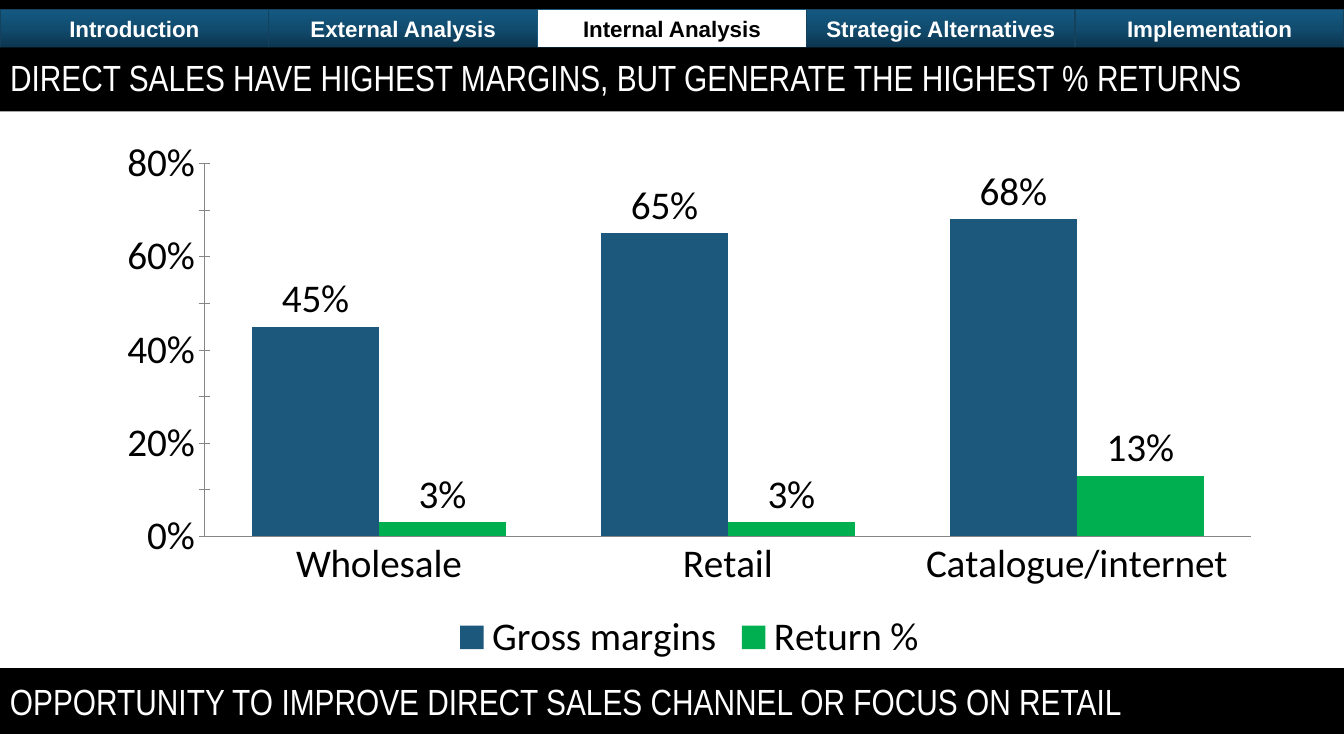
import copy
from dataclasses import dataclass

import pptx
import pptx.chart.data
import pptx.dml.color
import pptx.enum.chart
import pptx.enum.shapes
import pptx.enum.text
import pptx.util

PX = 9525
SLIDE_W, SLIDE_H = 1280, 720
STRIP_H, TAB_H, BAR_H = 9, 36, 61
BLACK, WHITE, NAVY, GREEN, GREY = "000000", "FFFFFF", "1B587C", "00B050", "868686"
TAB_GRADIENT = ((0, "0C354E"), (0.5, "114C6F"), (1, "145A83"))
ACTIVE_TAB = "Internal Analysis"
TABS = ("Introduction", "External Analysis", ACTIVE_TAB,
        "Strategic Alternatives", "Implementation")


@dataclass(frozen=True)
class Box:
    x: int
    y: int
    w: int
    h: int

    def emu(self) -> tuple[int, ...]:
        return tuple(v * PX for v in (self.x, self.y, self.w, self.h))


@dataclass(frozen=True)
class Series:
    name: str
    values: tuple[float, ...]
    color: str


CATEGORIES = ("Wholesale", "Retail", "Catalogue/internet")
SERIES = (
    Series("Gross margins", (0.45, 0.65, 0.68), NAVY),
    Series("Return %", (0.03, 0.03, 0.13), GREEN),
)


def rgb(color: str) -> pptx.dml.color.RGBColor:
    return pptx.dml.color.RGBColor.from_string(color)


def paint(fill, color: str) -> None:
    fill.solid()
    fill.fore_color.rgb = rgb(color)


def set_font(font, name: str, size: float, color: str, bold: bool = False) -> None:
    font.name = name
    font.size = pptx.util.Pt(size)
    font.bold = bold
    font.color.rgb = rgb(color)


def set_text(sp, text: str, *, font: str = "Arial Narrow", size: float = 26,
             color: str = WHITE, bold: bool = False, align: str = "LEFT",
             spacing: float = 1.0) -> None:
    tf = sp.text_frame
    tf.word_wrap = True
    tf.auto_size = pptx.enum.text.MSO_AUTO_SIZE.NONE
    tf.vertical_anchor = pptx.enum.text.MSO_ANCHOR.MIDDLE
    p = tf.paragraphs[0]
    p.alignment = pptx.enum.text.PP_ALIGN[align]
    p.line_spacing = spacing
    r = p.add_run()
    r.text = text
    set_font(r.font, font, size, color, bold)


def add_rect(s, box: Box, color: str, line: str | None = None):
    sp = s.shapes.add_shape(pptx.enum.shapes.MSO_SHAPE.RECTANGLE, *box.emu())
    sp.shadow.inherit = False
    paint(sp.fill, color)
    if line:
        sp.line.color.rgb = rgb(line)
        sp.line.width = pptx.util.Pt(1)
    else:
        sp.line.fill.background()
    return sp


def paint_tab_gradient(sp) -> None:
    sp.fill.gradient()
    sp.fill.gradient_angle = 90
    stops = sp.fill._fill._gradFill.gsLst
    stops.insert(1, copy.deepcopy(stops[0]))
    for stop, (position, color) in zip(sp.fill.gradient_stops, TAB_GRADIENT):
        stop.position = position
        stop.color.rgb = rgb(color)


def add_tabs(s) -> None:
    width = SLIDE_W // len(TABS)
    for i, label in enumerate(TABS):
        active = label == ACTIVE_TAB
        box = Box(i * width, STRIP_H, width, TAB_H)
        sp = add_rect(s, box, WHITE, NAVY if active else "14415C")
        if not active:
            paint_tab_gradient(sp)
        set_text(sp, label, font="Arial", size=16, bold=True, align="CENTER",
                 color=BLACK if active else WHITE)


def add_title(s, text: str) -> None:
    sp = s.shapes.title
    s.shapes._spTree.append(sp._element)
    box = Box(0, STRIP_H + TAB_H, SLIDE_W, BAR_H)
    sp.left, sp.top, sp.width, sp.height = box.emu()
    paint(sp.fill, BLACK)
    set_text(sp, text, spacing=0.9)


def add_margin_chart(s, box: Box) -> None:
    data = pptx.chart.data.CategoryChartData(number_format="0%")
    data.categories = CATEGORIES
    for series in SERIES:
        data.add_series(series.name, series.values)
    chart = s.shapes.add_chart(
        pptx.enum.chart.XL_CHART_TYPE.COLUMN_CLUSTERED, *box.emu(), data).chart
    set_font(chart.font, "Calibri", 28, BLACK)
    chart.has_title = False
    chart.has_legend = True
    chart.legend.position = pptx.enum.chart.XL_LEGEND_POSITION.BOTTOM
    chart.legend.include_in_layout = False

    tick = pptx.enum.chart.XL_TICK_MARK
    values = chart.value_axis
    values.minimum_scale, values.maximum_scale = 0, 0.8
    values.has_major_gridlines = False
    values.tick_labels.number_format = "0%"
    values.tick_labels.number_format_is_linked = False
    for axis, mark in ((values, tick.CROSS), (chart.category_axis, tick.NONE)):
        axis.major_tick_mark = mark
        axis.minor_tick_mark = tick.NONE
        axis.format.line.color.rgb = rgb(GREY)

    plot = chart.plots[0]
    plot.gap_width, plot.overlap = 75, 0
    plot.vary_by_categories = False
    for bars, series in zip(plot.series, SERIES):
        paint(bars.format.fill, series.color)
        labels = bars.data_labels
        labels.show_value = True
        labels.number_format = "0%"
        labels.number_format_is_linked = False
        labels.position = pptx.enum.chart.XL_LABEL_POSITION.OUTSIDE_END


def main() -> None:
    prs = pptx.Presentation()
    prs.slide_width, prs.slide_height = SLIDE_W * PX, SLIDE_H * PX
    s = prs.slides.add_slide(prs.slide_layouts[5])
    add_rect(s, Box(0, 0, SLIDE_W, STRIP_H), BLACK)
    add_tabs(s)
    add_title(s, "DIRECT SALES HAVE HIGHEST MARGINS, BUT GENERATE THE HIGHEST % RETURNS")
    takeaway = add_rect(s, Box(0, 637, SLIDE_W, BAR_H), BLACK, BLACK)
    set_text(takeaway, "OPPORTUNITY TO IMPROVE DIRECT SALES CHANNEL OR FOCUS ON RETAIL")
    add_margin_chart(s, Box(99, 123, 1115, 514))
    prs.save("out.pptx")


if __name__ == "__main__":
    main()
